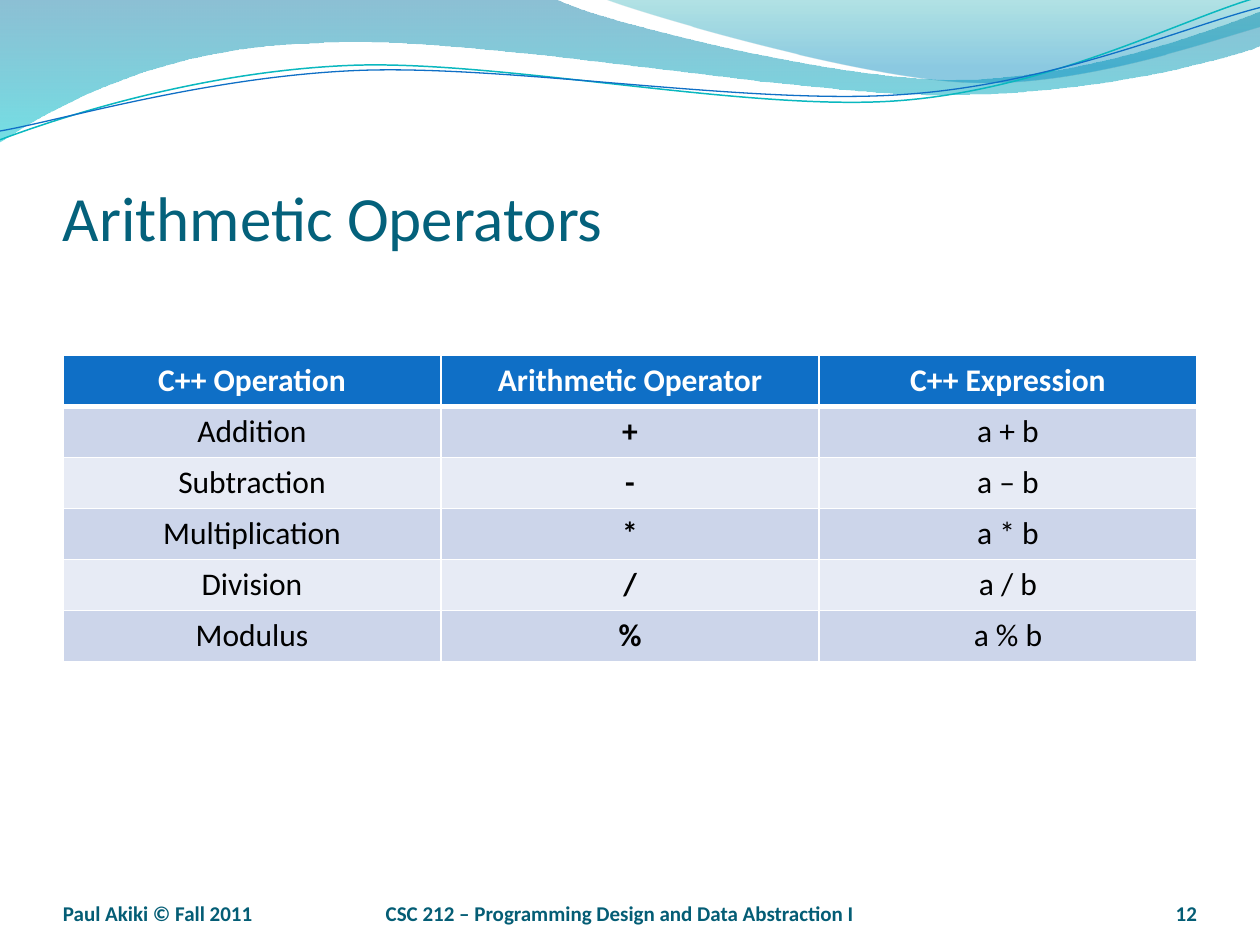
from dataclasses import dataclass

from lxml import etree
from pptx import Presentation
from pptx.dml.color import RGBColor
from pptx.enum.text import MSO_ANCHOR, PP_ALIGN
from pptx.oxml.ns import qn
from pptx.util import Inches, Pt

LEFT, CENTER, RIGHT = PP_ALIGN.LEFT, PP_ALIGN.CENTER, PP_ALIGN.RIGHT
BOTTOM = MSO_ANCHOR.BOTTOM


@dataclass(frozen=True)
class Theme:
    font: str = "Calibri"
    title: str = "04617B"
    footer: str = "045D75"
    header: str = "0F6FC6"
    header_text: str = "FFFFFF"
    body_text: str = "000000"
    stripes: tuple = ("CCD5EA", "E7EBF5")
    border: str = "FFFFFF"
    teal_line: str = "0AB8BF"
    blue_line: str = "0F6FC6"
    title_size: int = 36
    table_size: int = 18
    footer_size: int = 12


THEME = Theme()

TITLE = "Arithmetic Operators"
OPERATORS = [
    ("C++ Operation", "Arithmetic Operator", "C++ Expression"),
    ("Addition", "+", "a + b"),
    ("Subtraction", "-", "a – b"),
    ("Multiplication", "*", "a * b"),
    ("Division", "/", "a / b"),
    ("Modulus", "%", "a % b"),
]
FOOTERS = [  # text, left, width, alignment
    ("CSC 212 – Programming Design and Data Abstraction I", 2.92, 4, CENTER),
    ("12", 8.67, 0.83, RIGHT),
    ("Paul Akiki © Fall 2011", 0.5, 2.33, LEFT),
]

# Each outline is a start point, then segments: one point for a line,
# three points (two controls and an end) for a curve.
BANDS = [  # outline, gradient stops as (position, colour, opacity %)
    ([(0, 0), [(4.4, -0.01)],
      [(4.76, 0.17), (6.64, 0.63), (7.58, 0.63)],
      [(8.53, 0.63), (9.58, 0.26), (10, 0.09)],
      [(10.01, 0.36)],
      [(9.83, 0.44), (8.7, 0.76), (7.46, 0.75)],
      [(6.22, 0.75), (3.82, 0.28), (2.57, 0.34)],
      [(1.29, 0.36), (0.46, 0.83), (-0.01, 1.13)]],
     [(0, "0074A1", 45), (1, "00C6CF", 55)]),
    ([(4.79, -0.01),
      [(5.09, 0.11), (6.82, 0.62), (7.69, 0.65)],
      [(8.56, 0.69), (9.61, 0.32), (10, 0.21)],
      [(10, 0)]],
     [(0, "00A1A9", 30), (0.8, "008BBF", 45)]),
]
WAVES = [  # outline, colour, width in points
    ([(0, 1.11),
      [(0.48, 0.93), (1.58, 0.57), (2.77, 0.52)],
      [(3.95, 0.47), (5.93, 0.89), (7.13, 0.8)],
      [(8.33, 0.71), (9.38, 0.15), (9.98, -0.02)]],
     THEME.teal_line, 0.85),
    ([(0, 1.04),
      [(0.47, 0.96), (1.64, 0.61), (2.83, 0.56)],
      [(4.03, 0.51), (5.97, 0.84), (7.17, 0.75)],
      [(8.36, 0.67), (9.41, 0.21), (10, 0.06)]],
     THEME.blue_line, 0.75),
]


def color(value):
    return RGBColor.from_string(value)


def add_outline(page, outline, close):
    """Build the outline through its end points, then bend the curved segments."""
    start, *segments = outline
    ends = [tuple(map(Inches, segment[-1])) for segment in segments]
    builder = page.shapes.build_freeform(*map(Inches, start))
    builder.add_line_segments(ends, close=close)
    shape = builder.convert_to_shape()
    shape.shadow.inherit = False
    lines = list(shape.element.spPr.iter(qn("a:lnTo")))
    for line, segment in zip(lines, segments):
        if len(segment) == 3:
            curve = etree.Element(qn("a:cubicBezTo"))
            for x, y in segment:
                etree.SubElement(curve, qn("a:pt"),
                                 x=str(Inches(x) - shape.left),
                                 y=str(Inches(y) - shape.top))
            line.getparent().replace(line, curve)
    return shape


def add_band(page, outline, stops):
    band = add_outline(page, outline, close=True)
    band.line.fill.background()
    band.fill.gradient()
    band.fill.gradient_angle = 270
    for stop, (position, value, _) in zip(band.fill.gradient_stops, stops):
        stop.position = position
        stop.color.rgb = color(value)
    shades = band.element.spPr.iter(qn("a:srgbClr"))
    for shade, (_, _, opacity) in zip(shades, stops):
        etree.SubElement(shade, qn("a:alpha"), val=str(opacity * 1000))


def add_wave(page, outline, value, width):
    wave = add_outline(page, outline, close=False)
    wave.fill.background()
    wave.line.color.rgb = color(value)
    wave.line.width = Pt(width)


def write(frame, text, size, value, bold=False, align=LEFT):
    para = frame.paragraphs[0]
    para.alignment = align
    span = para.add_run()
    span.text = text
    span.font.name = THEME.font
    span.font.size = Pt(size)
    span.font.bold = bold
    span.font.color.rgb = color(value)


def add_label(page, text, place, size, value, top_inset=0, **style):
    box = page.shapes.add_textbox(*map(Inches, place))
    frame = box.text_frame
    frame.word_wrap = True
    frame.vertical_anchor = BOTTOM
    frame.margin_left = frame.margin_right = frame.margin_bottom = 0
    frame.margin_top = Inches(top_inset)
    write(frame, text, size, value, **style)


def set_borders(cell, widths):
    """Draw the cell's sides; widths maps L, R, T and B, in that order, to points."""
    properties = cell._tc.get_or_add_tcPr()
    for side, width in widths.items():
        line = etree.SubElement(properties, qn(f"a:ln{side}"), w=str(Pt(width)))
        fill = etree.SubElement(line, qn("a:solidFill"))
        etree.SubElement(fill, qn("a:srgbClr"), val=THEME.border)


def add_operator_table(page):
    rows, columns = len(OPERATORS), len(OPERATORS[0])
    table = page.shapes.add_table(
        rows, columns, Inches(0.5), Inches(2.82), Inches(9), Inches(2.43)).table
    for r, texts in enumerate(OPERATORS):
        is_header = r == 0
        fill = THEME.header if is_header else THEME.stripes[(r - 1) % 2]
        text_color = THEME.header_text if is_header else THEME.body_text
        for c, text in enumerate(texts):
            cell = table.cell(r, c)
            set_borders(cell, {"L": 1, "R": 1, "T": 3 if r == 1 else 1,
                               "B": 3 if is_header else 1})
            cell.fill.solid()
            cell.fill.fore_color.rgb = color(fill)
            write(cell.text_frame, text, THEME.table_size, text_color,
                  bold=is_header or c == 1, align=CENTER)


def main():
    deck = Presentation()
    deck.slide_width, deck.slide_height = Inches(10), Inches(7.5)
    page = deck.slides.add_slide(deck.slide_layouts[6])
    for band in BANDS:
        add_band(page, *band)
    for wave in WAVES:
        add_wave(page, *wave)
    add_label(page, TITLE, (0.5, 0.77, 9, 1.25), THEME.title_size, THEME.title,
              top_inset=0.05)
    add_operator_table(page)
    for text, left, width, align in FOOTERS:
        add_label(page, text, (left, 6.95, width, 0.4), THEME.footer_size,
                  THEME.footer, bold=True, align=align)
    deck.save("out.pptx")


if __name__ == "__main__":
    main()
